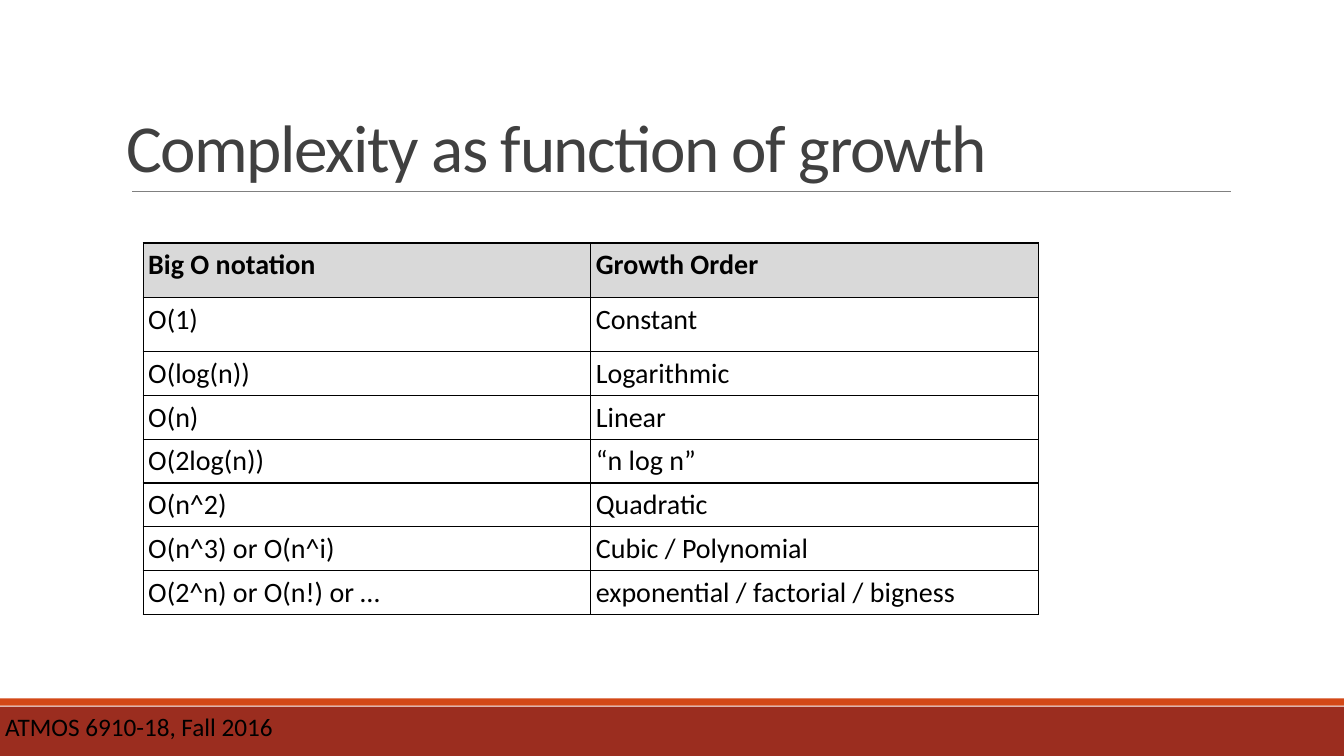
from dataclasses import dataclass

from lxml import etree
from pptx import Presentation
from pptx.dml.color import RGBColor
from pptx.enum.shapes import MSO_CONNECTOR, MSO_SHAPE
from pptx.enum.text import MSO_ANCHOR, PP_ALIGN
from pptx.oxml.ns import qn
from pptx.util import Inches, Pt

RECT = MSO_SHAPE.RECTANGLE
STRAIGHT = MSO_CONNECTOR.STRAIGHT
BOTTOM, TOP = MSO_ANCHOR.BOTTOM, MSO_ANCHOR.TOP
LEFT = PP_ALIGN.LEFT
TITLE_ONLY = 5


@dataclass(frozen=True)
class Theme:
    font: str = "Calibri"
    black: str = "000000"
    title: str = "404040"
    rule: str = "808080"
    header: str = "D9D9D9"
    footer: str = "9B2D1F"
    accent: str = "D34817"
    title_size: int = 48
    table_size: int = 20
    footer_size: int = 18
    inset: float = 0.05


THEME = Theme()

GROWTH_ROWS = [
    ("Big O notation", "Growth Order"),
    ("O(1)", "Constant"),
    ("O(log(n))", "Logarithmic"),
    ("O(n)", "Linear"),
    ("O(2log(n))", "“n log n”"),
    ("O(n^2)", "Quadratic"),
    ("O(n^3) or O(n^i)", "Cubic / Polynomial"),
    ("O(2^n) or O(n!) or …", "exponential / factorial / bigness"),
]


def rgb(value):
    return RGBColor.from_string(value)


def set_insets(target):
    """Give a text frame or a table cell the common margins."""
    target.margin_left = target.margin_right = Inches(THEME.inset)
    target.margin_top = target.margin_bottom = Inches(THEME.inset)


def write(tf, text, size, color, bold=False):
    tf.text = text
    p = tf.paragraphs[0]
    p.alignment = LEFT
    r = p.runs[0]
    r.font.name, r.font.size, r.font.bold = THEME.font, Pt(size), bold
    r.font.color.rgb = rgb(color)
    return p


def add_bar(slide, x, y, w, h, color):
    sp = slide.shapes.add_shape(RECT, Inches(x), Inches(y), Inches(w), Inches(h))
    sp.shadow.inherit = False
    sp.fill.solid()
    sp.fill.fore_color.rgb = rgb(color)
    sp.line.fill.background()


def add_footer(slide, x, y, w, h):
    # Thin accent stripe, dark band, course name
    stripe, gap = 0.07, 0.01
    band_y = y + stripe + gap
    add_bar(slide, x, band_y, w, h - stripe - gap, THEME.footer)
    box = slide.shapes.add_textbox(Inches(x), Inches(band_y), Inches(w), Inches(0.39))
    tf = box.text_frame
    tf.word_wrap = True
    set_insets(tf)
    write(tf, "ATMOS 6910-18, Fall 2016", THEME.footer_size, THEME.black)
    add_bar(slide, x, y, w, stripe, THEME.accent)


def add_title(slide, x, y, w, h):
    # Rule along the bottom of the title
    rule_x, rule_y, rule_w = x + 0.11, y + h, 10.9
    rule = slide.shapes.add_connector(
        STRAIGHT, Inches(rule_x), Inches(rule_y), Inches(rule_x + rule_w), Inches(rule_y))
    rule.line.color.rgb = rgb(THEME.rule)
    rule.line.width = Pt(0.5)
    etree.SubElement(rule._element.spPr, qn("a:effectLst"))

    # Title text
    sp = slide.shapes.title
    sp.left, sp.top, sp.width, sp.height = Inches(x), Inches(y), Inches(w), Inches(h)
    tf = sp.text_frame
    tf.word_wrap = True
    tf.vertical_anchor = BOTTOM
    set_insets(tf)
    p = write(tf, "Complexity as function of growth", THEME.title_size, THEME.title)
    p.line_spacing = 0.85
    p.runs[0].font._element.set("spc", "-100")


def set_borders(cell):
    tc_pr = cell._tc.get_or_add_tcPr()
    for i, side in enumerate(("a:lnL", "a:lnR", "a:lnT", "a:lnB")):
        ln = etree.Element(qn(side), w=str(Pt(1)))
        fill = etree.SubElement(ln, qn("a:solidFill"))
        etree.SubElement(fill, qn("a:srgbClr"), val=THEME.black)
        tc_pr.insert(i, ln)


def add_growth_table(slide, x, y, w, h):
    n_rows, n_cols = len(GROWTH_ROWS), len(GROWTH_ROWS[0])
    table = slide.shapes.add_table(
        n_rows, n_cols, Inches(x), Inches(y), Inches(w), Inches(h)).table
    table.horz_banding = False
    for col in table.columns:
        col.width = Inches(w / n_cols)
    for i, texts in enumerate(GROWTH_ROWS):
        table.rows[i].height = Inches(0.54 if i < 2 else 0.41)
        for j, text in enumerate(texts):
            cell = table.cell(i, j)
            set_insets(cell)
            cell.vertical_anchor = TOP
            write(cell.text_frame, text, THEME.table_size, THEME.black, bold=i == 0)
            if i == 0:
                cell.fill.solid()
                cell.fill.fore_color.rgb = rgb(THEME.header)
            else:
                cell.fill.background()
            set_borders(cell)


def main():
    prs = Presentation()
    prs.slide_width, prs.slide_height = Inches(13.33), Inches(7.5)
    slide = prs.slides.add_slide(prs.slide_layouts[TITLE_ONLY])
    add_footer(slide, 0, 6.93, 13.33, 0.57)
    add_title(slide, 1.2, 0.31, 11, 1.59)
    add_growth_table(slide, 1.42, 2.41, 8.88, 3.54)
    prs.save("out.pptx")


if __name__ == "__main__":
    main()
